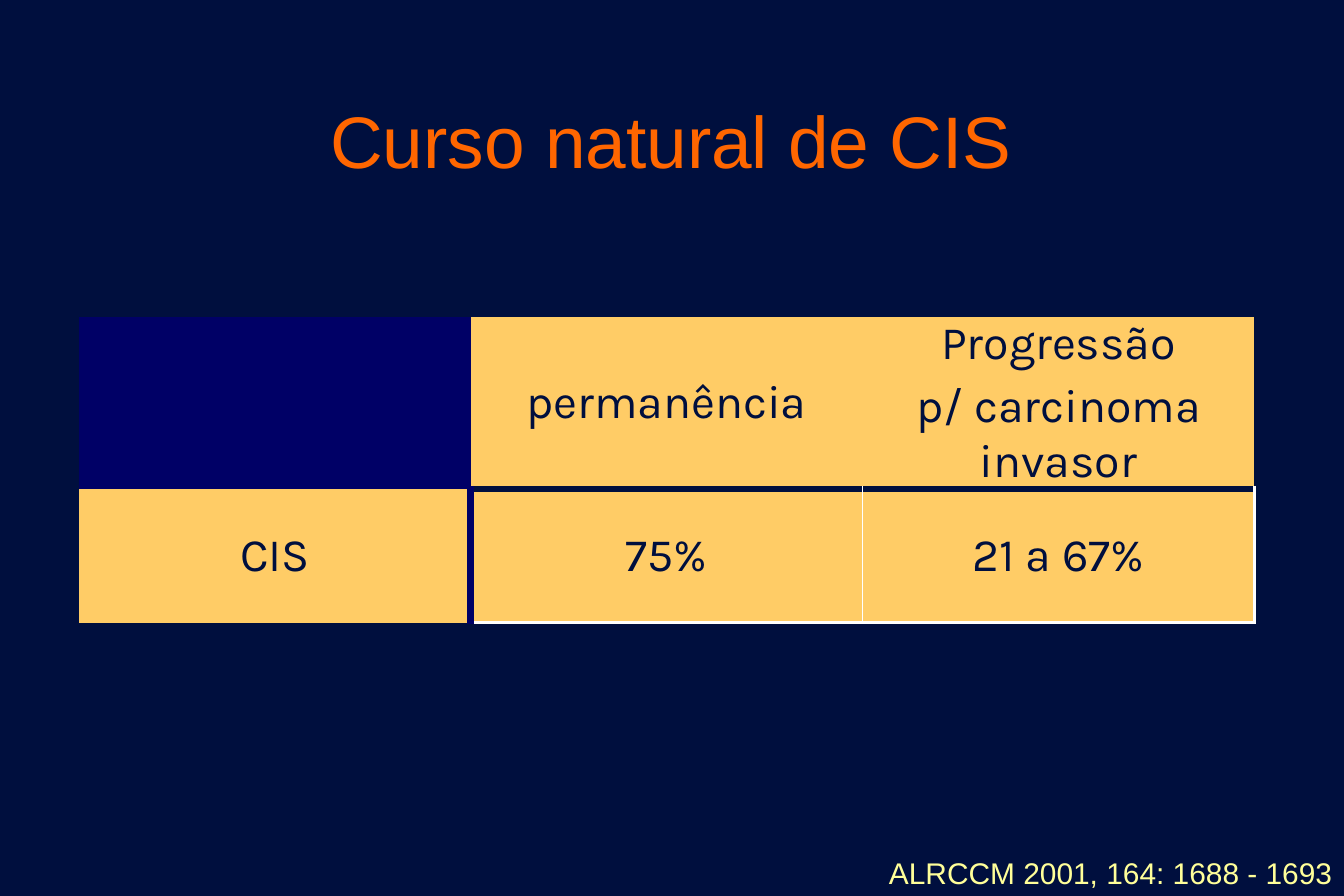
from dataclasses import dataclass, field

from lxml import etree
from pptx import Presentation
from pptx.dml.color import RGBColor
from pptx.enum.text import MSO_ANCHOR, PP_ALIGN
from pptx.oxml.ns import qn
from pptx.util import Inches, Pt

CENTER, RIGHT = PP_ALIGN.CENTER, PP_ALIGN.RIGHT
MIDDLE, BOTTOM = MSO_ANCHOR.MIDDLE, MSO_ANCHOR.BOTTOM
TITLE_ONLY = 5
NO_STYLE = "{2D5ABB26-0587-4C30-8999-92F81FD0307C}"

NIGHT, NAVY, SAND, WHITE = "000F3E", "000066", "FFCC66", "FFFFFF"
ORANGE, PALE_YELLOW = "FF6600", "FFFF99"
BELOW_HEADER, BESIDE_LABEL = (NIGHT, 4.5), (NAVY, 4.5)
OUTER, INNER = (WHITE, 2.25), (WHITE, 1)


@dataclass
class CellSpec:
    """Text, fill and borders; border keys are the sides L, R, T and B."""
    text: str = ""
    fill: str = SAND
    borders: dict[str, tuple[str, float]] = field(default_factory=dict)


ROWS = [
    [
        CellSpec(fill=NAVY),
        CellSpec("permanência", borders={"B": BELOW_HEADER}),
        CellSpec("Progressão\np/ carcinoma invasor", borders={"B": BELOW_HEADER}),
    ],
    [
        CellSpec("CIS", borders={"R": BESIDE_LABEL}),
        CellSpec("75%", borders={"L": BESIDE_LABEL, "R": INNER, "T": BELOW_HEADER, "B": OUTER}),
        CellSpec("21 a 67%", borders={"L": INNER, "R": OUTER, "T": BELOW_HEADER, "B": OUTER}),
    ],
]


def color(value: str) -> RGBColor:
    return RGBColor.from_string(value)


def format_text(frame, font: str, size: float, hue: str, align) -> None:
    for para in frame.paragraphs:
        para.alignment = align
        for span in para.runs:
            span.font.name = font
            span.font.size = Pt(size)
            span.font.color.rgb = color(hue)


def place(shape, left: float, top: float, width: float, height: float) -> None:
    shape.left, shape.top = Inches(left), Inches(top)
    shape.width, shape.height = Inches(width), Inches(height)


def add_borders(cell, borders: dict[str, tuple[str, float]]) -> None:
    """Draw the given sides; must run before the cell is filled."""
    properties = cell._tc.get_or_add_tcPr()
    for side in "LRTB":
        if side in borders:
            hue, width = borders[side]
            line = etree.SubElement(properties, qn(f"a:ln{side}"), w=str(int(Pt(width))))
            fill = etree.SubElement(line, qn("a:solidFill"))
            etree.SubElement(fill, qn("a:srgbClr"), val=hue)


def fill_cell(cell, spec: CellSpec) -> None:
    add_borders(cell, spec.borders)
    cell.fill.solid()
    cell.fill.fore_color.rgb = color(spec.fill)
    cell.vertical_anchor = MIDDLE
    cell.margin_left = cell.margin_right = cell.margin_top = cell.margin_bottom = 0
    if spec.text:
        cell.text_frame.text = spec.text
        format_text(cell.text_frame, "Karla", 28, NIGHT, CENTER)
        for para in cell.text_frame.paragraphs[1:]:
            para.space_before = Pt(5.6)


def add_course_table(page) -> None:
    frame = page.shapes.add_table(
        len(ROWS), len(ROWS[0]), Inches(0.66), Inches(2.65), Inches(9.84), Inches(2.24))
    table = frame.table
    table.first_row = table.horz_banding = False
    table._tbl.tblPr.find(qn("a:tableStyleId")).text = NO_STYLE
    for row_index, row in enumerate(ROWS):
        for column_index, spec in enumerate(row):
            fill_cell(table.cell(row_index, column_index), spec)


def main() -> None:
    deck = Presentation()
    deck.slide_width, deck.slide_height = Inches(11.25), Inches(7.5)
    page = deck.slides.add_slide(deck.slide_layouts[TITLE_ONLY])
    page.background.fill.solid()
    page.background.fill.fore_color.rgb = color(NIGHT)

    title = page.shapes.title
    place(title, 0.56, 0.42, 10.12, 1.5)
    title.text_frame.text = "Curso natural de CIS"
    title.text_frame.vertical_anchor = MIDDLE
    format_text(title.text_frame, "Arial", 44, ORANGE, CENTER)

    add_course_table(page)

    citation = page.shapes.add_textbox(Inches(1.77), Inches(6.98), Inches(9.48), Inches(0.52))
    citation.text_frame.word_wrap = True
    citation.text_frame.vertical_anchor = BOTTOM
    citation.text_frame.text = "ALRCCM 2001, 164: 1688 - 1693"
    format_text(citation.text_frame, "Arial", 18, PALE_YELLOW, RIGHT)

    deck.save("out.pptx")


if __name__ == "__main__":
    main()
